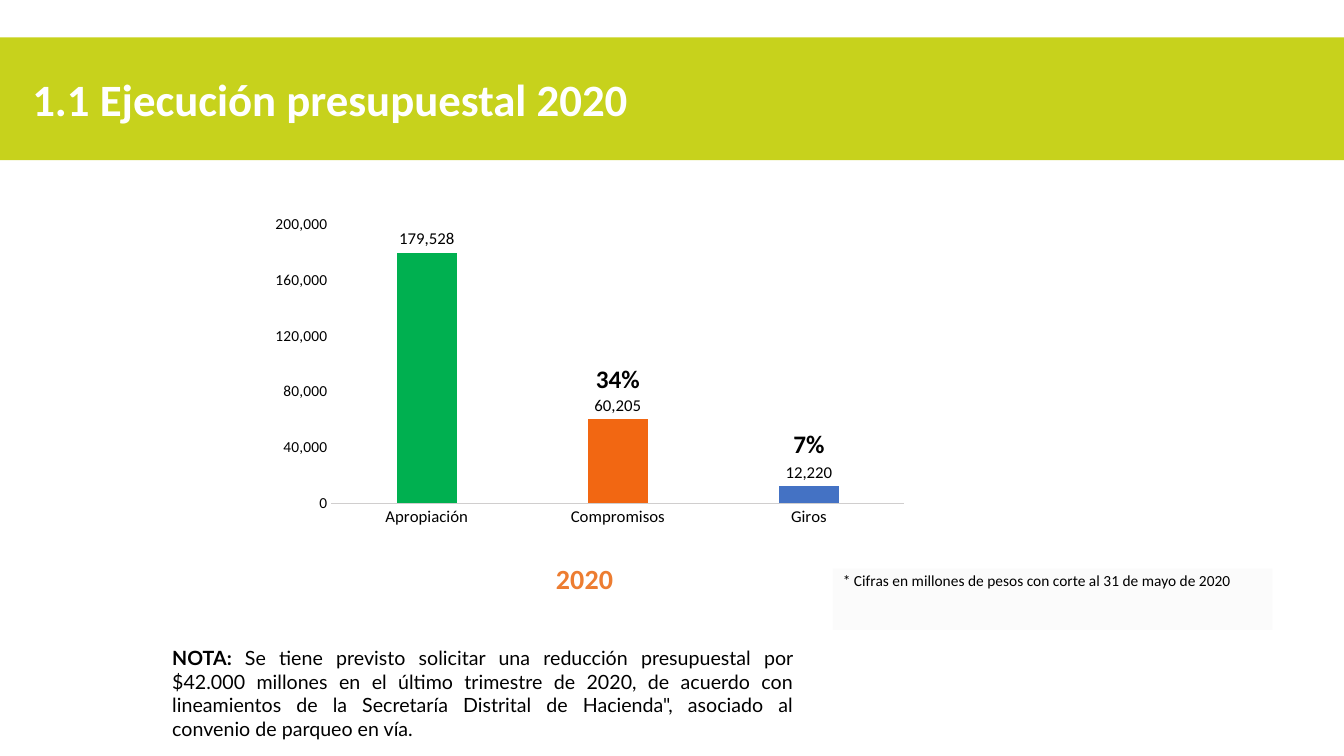
from lxml.etree import SubElement as Sub, Element
from pptx import Presentation
from pptx.chart.data import CategoryChartData as Data
from pptx.dml.color import RGBColor as RGB
from pptx.enum.chart import XL_CHART_TYPE as Chart, XL_LABEL_POSITION as Spot, XL_TICK_MARK as Tick
from pptx.enum.shapes import MSO_SHAPE as Shape
from pptx.enum.text import MSO_ANCHOR as Anchor, MSO_AUTO_SIZE as Fit, PP_ALIGN as Align
from pptx.oxml.ns import qn
from pptx.util import Inches, Pt

HUES = {
    "lime": "C7D21C", "white": "FFFFFF", "black": "000000", "pale": "F8F8F8",
    "green": "00B050", "orange": "F26712", "blue": "4472C4",
    "amber": "ED7D31", "rule": "D0CECE",
}


def hue(name):
    return RGB.from_string(HUES[name])


def style(font, size, color="black", bold=False, face="Calibri"):
    font.name, font.size, font.bold = face, Pt(size), bold
    font.color.rgb = hue(color)


def write(frame, *runs, align=Align.LEFT, space=1.0, fit=Fit.NONE, **look):
    """Fill a text frame; each run is a text or a (text, bold) pair."""
    frame.word_wrap = True
    frame.auto_size = fit
    frame.vertical_anchor = Anchor.TOP
    para = frame.paragraphs[0]
    para.alignment, para.line_spacing = align, space
    for item in runs:
        text, bold = item if isinstance(item, tuple) else (item, look.get("bold", False))
        run = para.add_run()
        run.text = text
        style(run.font, **{**look, "bold": bold})


def place(parent, index, inner=False, **shares):
    """Give a chart part a manual layout in shares of the chart."""
    old = parent.find(qn("c:layout"))
    if old is not None:
        parent.remove(old)
    node = Element(qn("c:layout"))
    parent.insert(index, node)
    man = Sub(node, qn("c:manualLayout"))
    if inner:
        Sub(man, qn("c:layoutTarget")).set("val", "inner")
    for mode in ("xMode", "yMode"):
        Sub(man, qn("c:" + mode)).set("val", "edge")
    for key, value in shares.items():
        Sub(man, qn("c:" + key)).set("val", str(value))


class Deck:
    """Places elements by percent of the slide's width and height."""

    def __init__(self):
        self.prs = Presentation()
        self.prs.slide_width, self.prs.slide_height = Inches(13.33), Inches(7.5)
        self.slide = self.prs.slides.add_slide(self.prs.slide_layouts[5])
        self.shapes = self.slide.shapes

    def box(self, left, top, width, height):
        across, down = self.prs.slide_width / 100, self.prs.slide_height / 100
        return (int(left * across), int(top * down), int(width * across), int(height * down))

    def title(self, text, at, **look):
        head = self.shapes.title
        head.left, head.top, head.width, head.height = self.box(*at)
        write(head.text_frame, text, **look)

    def rect(self, at, color, alpha=None):
        rect = self.shapes.add_shape(Shape.RECTANGLE, *self.box(*at))
        rect.shadow.inherit = False
        rect.fill.solid()
        rect.fill.fore_color.rgb = hue(color)
        rect.line.fill.background()
        if alpha:
            tone = rect.fill._xPr.find(".//" + qn("a:srgbClr"))
            Sub(tone, qn("a:alpha")).set("val", str(alpha * 1000))
        return rect

    def band(self, at, color):
        """Lay a rectangle behind the title."""
        self.shapes.title.element.addprevious(self.rect(at, color).element)

    def text(self, at, *runs, **look):
        frame = self.shapes.add_textbox(*self.box(*at)).text_frame
        write(frame, *runs, fit=Fit.SHAPE_TO_FIT_TEXT, **look)

    def bars(self, at, name, values, colors):
        data = Data(number_format="#,##0")
        data.categories = list(values)
        data.add_series(name, list(values.values()))
        chart = self.shapes.add_chart(Chart.COLUMN_CLUSTERED, *self.box(*at), data).chart
        style(chart.font, 10)
        chart.has_legend = False
        chart.has_title = True
        head = chart.chart_title
        run = head.text_frame.paragraphs[0].add_run()
        run.text = name
        style(run.font, 20, "amber", True)
        place(head.element, 1, x=0.45, y=0.88)
        place(chart.element.find(".//" + qn("c:plotArea")), 0, True,
              x=0.126, y=0.028, w=0.846, h=0.721)

        plot = chart.plots[0]
        plot.gap_width, plot.overlap, plot.vary_by_categories = 219, -27, False
        line = plot.series[0]
        for index, color in enumerate(colors):
            fill = line.points[index].format.fill
            fill.solid()
            fill.fore_color.rgb = hue(color)
        tags = line.data_labels
        tags.show_value, tags.position = True, Spot.OUTSIDE_END
        tags.number_format, tags.number_format_is_linked = "#,##0", False
        style(tags.font, 12)

        for axis, size in ((chart.category_axis, 12), (chart.value_axis, 11)):
            axis.major_tick_mark = axis.minor_tick_mark = Tick.NONE
            axis.has_major_gridlines = False
            style(axis.tick_labels.font, size)
        base = chart.category_axis.format.line
        base.color.rgb, base.width = hue("rule"), Pt(0.75)
        scale = chart.value_axis
        scale.format.line.fill.background()
        scale.minimum_scale, scale.maximum_scale, scale.major_unit = 0, 200000, 40000
        scale.tick_labels.number_format = "#,##0"
        scale.tick_labels.number_format_is_linked = False


def main():
    deck = Deck()
    deck.bars((18.3, 28.27, 50.41, 51.73), "2020",
              {"Apropiación": 179528, "Compromisos": 60205, "Giros": 12220},
              ("green", "orange", "blue"))
    deck.band((0, 4.93, 100, 16.27), "lime")
    deck.title("1.1 Ejecución presupuestal 2020", (1.65, 8.8, 91.97, 8.53),
               size=32, color="white", bold=True)
    note = deck.rect((61.97, 75.2, 32.71, 8.13), "pale", alpha=46)
    write(note.text_frame, "* Cifras en millones de pesos con corte al 31 de mayo de 2020",
          align=Align.JUSTIFY, space=0.9, size=11)
    for share, left, top in (("34%", 43.59, 47.47), ("7%", 58.29, 56)):
        deck.text((left, top, 5.85, 5.07), share, size=18, bold=True)
    deck.text((12.08, 84.8, 47.71, 13.87), ("NOTA: ", True),
              "Se tiene previsto solicitar una reducción presupuestal por $42.000 millones "
              "en el último trimestre de 2020, de acuerdo con lineamientos de la Secretaría "
              "Distrital de Hacienda\", asociado al convenio de parqueo en vía.",
              align=Align.JUSTIFY, size=14, face="Lato")
    deck.prs.save("out.pptx")


if __name__ == "__main__":
    main()
